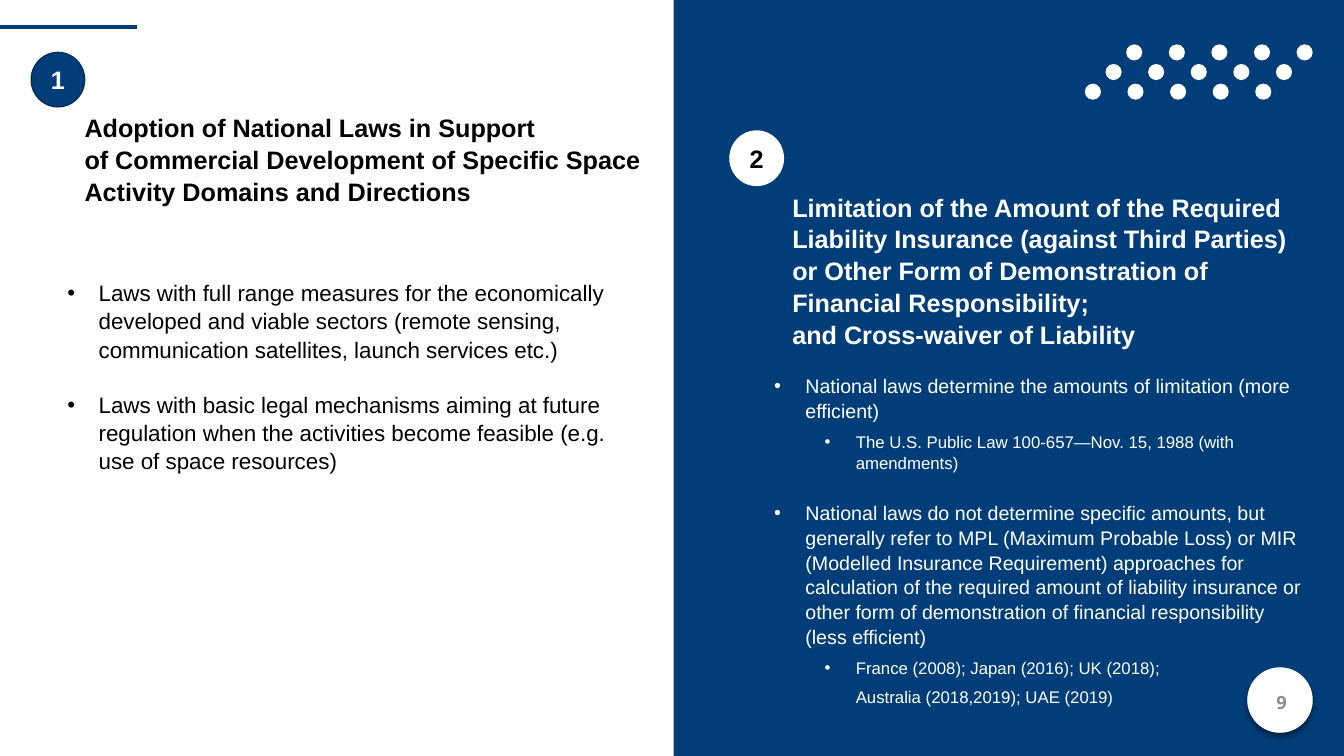
from dataclasses import dataclass

from lxml.etree import SubElement
from pptx import Presentation
from pptx.dml.color import RGBColor as RGB
from pptx.enum.shapes import MSO_CONNECTOR as CONN, MSO_SHAPE as SHAPE
from pptx.enum.text import MSO_ANCHOR as ANCHOR, PP_ALIGN as ALIGN
from pptx.oxml.ns import qn
from pptx.util import Inches, Pt


@dataclass(frozen=True)
class Theme:
    navy: RGB = RGB(0x01, 0x3E, 0x79)
    navy_edge: RGB = RGB(0x01, 0x2E, 0x5A)
    white: RGB = RGB(0xFF, 0xFF, 0xFF)
    black: RGB = RGB(0, 0, 0)
    grey: RGB = RGB(0x8C, 0x8C, 0x8C)
    font: str = "Arial"
    number_font: str = "Open Sans"
    heading: float = 18
    body: float = 16
    body_small: float = 14
    detail: float = 12
    number: float = 13
    leading: float = 1.05
    blank_line: float = 19.3
    detail_gap: float = 6


T = Theme()
POINT, DETAIL = 0.31, 0.81
HANG = 0.31


def set_attrs(obj, values):
    for name, value in values.items():
        setattr(obj, name, value)


def add_filled(shapes, kind, box, fill, line=None):
    sp = shapes.add_shape(kind, *map(Inches, box))
    sp.shadow.inherit = False
    sp.fill.solid()
    sp.fill.fore_color.rgb = fill
    if line is None:
        sp.line.fill.background()
    else:
        sp.line.color.rgb = line
        sp.line.width = Pt(1)
    return sp


def add_box(s, box, **frame):
    tf = s.shapes.add_textbox(*map(Inches, box)).text_frame
    set_attrs(tf, {"word_wrap": True, **frame})
    return tf


def write(p, text, size, color, bold=False, font=T.font, **para):
    set_attrs(p, para)
    r = p.add_run()
    r.text = text
    set_attrs(r.font, {"name": font, "size": Pt(size), "bold": bold})
    r.font.color.rgb = color


def next_paragraph(tf, i):
    return tf.add_paragraph() if i else tf.paragraphs[0]


def indent(p, margin, bullet):
    pPr = p._p.get_or_add_pPr()
    pPr.set("marL", str(Inches(margin)))
    pPr.set("indent", str(-Inches(HANG) if bullet else 0))
    if bullet:
        SubElement(pPr, qn("a:buFont"), typeface=T.font)
        SubElement(pPr, qn("a:buChar"), char="•")
    else:
        SubElement(pPr, qn("a:buNone"))


def add_badge(s, x, y, label, fill, line, color):
    sp = add_filled(s.shapes, SHAPE.OVAL, (x, y, 0.53, 0.54), fill, line)
    tf = sp.text_frame
    set_attrs(tf, {"vertical_anchor": ANCHOR.MIDDLE, "margin_left": 0, "margin_right": 0})
    write(tf.paragraphs[0], label, T.heading, color, True, alignment=ALIGN.CENTER)


def add_heading(s, box, lines, color):
    tf = add_box(s, box)
    for i, line in enumerate(lines):
        write(next_paragraph(tf, i), line, T.heading, color, True,
              alignment=ALIGN.LEFT, line_spacing=T.leading)


def add_points(s, box, items, color, size):
    tf = add_box(s, box)
    for i, (margin, bullet, text) in enumerate(items):
        p = next_paragraph(tf, i)
        detail = margin == DETAIL
        if detail:
            before = T.detail_gap
        else:
            before = T.blank_line if i and bullet else 0
        write(p, text, T.detail if detail else size, color, level=int(detail),
              alignment=ALIGN.LEFT, line_spacing=T.leading, space_before=Pt(before))
        indent(p, margin, bullet)


def add_dots(s, x, y, w, h, dot=0.16, rows=3, cols=5, run=1.69):
    pitch = run / (cols - 1)
    shift = (w - dot - run) / (rows - 1)
    drop = (h - dot) / (rows - 1)
    group = s.shapes.add_group_shape()
    for row in range(rows):
        for col in range(cols):
            left = x + (rows - 1 - row) * shift + col * pitch
            add_filled(group.shapes, SHAPE.OVAL, (left, y + row * drop, dot, dot), T.white)


def add_page_number(s, x, y, d, number):
    disc = add_filled(s.shapes, SHAPE.OVAL, (x, y, d, d), T.white)
    effects = disc._element.spPr.find(qn("a:effectLst"))
    shadow = SubElement(effects, qn("a:outerShdw"), blurRad=str(Pt(4)),
                        dist=str(Pt(3)), dir="5400000", rotWithShape="0")
    black = SubElement(shadow, qn("a:srgbClr"), val=str(T.black))
    SubElement(black, qn("a:alpha"), val="40000")
    tf = add_box(s, (x - 0.03, y + 0.15, 0.74, 0.4), vertical_anchor=ANCHOR.MIDDLE)
    write(tf.paragraphs[0], number, T.number, T.grey, True, T.number_font,
          alignment=ALIGN.CENTER)


def add_accent_line(s, x, y, w):
    line = s.shapes.add_connector(CONN.STRAIGHT, *map(Inches, (x, y, x + w, y)))
    line.line.color.rgb = T.navy
    line.line.width = Pt(2.83)
    SubElement(line._element.spPr, qn("a:effectLst"))


def add_laws_region(s, x, y):
    add_accent_line(s, x, y + 0.27, 1.36)
    add_heading(s, (x + 0.74, y + 1.05, 6.67, 1.01), [
        "Adoption of National Laws in Support",
        "of Commercial Development of Specific Space Activity Domains and Directions",
    ], T.black)
    add_badge(s, x + 0.31, y + 0.52, "1", T.navy, T.navy_edge, T.white)
    add_points(s, (x + 0.57, y + 2.71, 5.54, 2.26), [
        (POINT, True, "Laws with full range measures for the economically developed and "
                      "viable sectors (remote sensing, communication satellites, "
                      "launch services etc.)"),
        (POINT, True, "Laws with basic legal mechanisms aiming at future regulation when "
                      "the activities become feasible (e.g. use of space resources)"),
    ], T.black, T.body)


def add_liability_region(s, x, y, w, h):
    add_filled(s.shapes, SHAPE.RECTANGLE, (x, y, w, h), T.navy)
    add_dots(s, x + 4.08, y + 0.44, 2.26, 0.55)
    add_page_number(s, x + 5.69, y + 6.62, 0.65, "9")
    add_badge(s, x + 0.56, y + 1.3, "2", T.white, T.white, T.black)
    add_heading(s, (x + 1.08, y + 1.84, 5.36, 1.62), [
        "Limitation of the Amount of the Required Liability Insurance (against Third "
        "Parties) or Other Form of Demonstration of Financial Responsibility;",
        "and Cross-waiver of Liability",
    ], T.white)
    add_points(s, (x + 0.9, y + 3.65, 5.54, 3.58), [
        (POINT, True, "National laws determine the amounts of limitation (more efficient)"),
        (DETAIL, True, "The U.S. Public Law 100-657—Nov. 15, 1988 (with amendments)"),
        (POINT, True, "National laws do not determine specific amounts, but generally refer "
                      "to MPL (Maximum Probable Loss) or MIR (Modelled Insurance "
                      "Requirement) approaches for calculation of the required amount of "
                      "liability insurance or other form of demonstration of financial "
                      "responsibility"),
        (POINT, False, "(less efficient)"),
        (DETAIL, True, "France (2008); Japan (2016); UK (2018);"),
        (DETAIL, False, "Australia (2018,2019); UAE (2019)"),
    ], T.white, T.body_small)


def main():
    prs = Presentation()
    set_attrs(prs, {"slide_width": Inches(13.33), "slide_height": Inches(7.5)})
    s = prs.slides.add_slide(prs.slide_layouts[6])
    add_liability_region(s, 6.68, 0, 6.65, 7.5)
    add_laws_region(s, 0, 0)
    prs.save("out.pptx")


if __name__ == "__main__":
    main()
